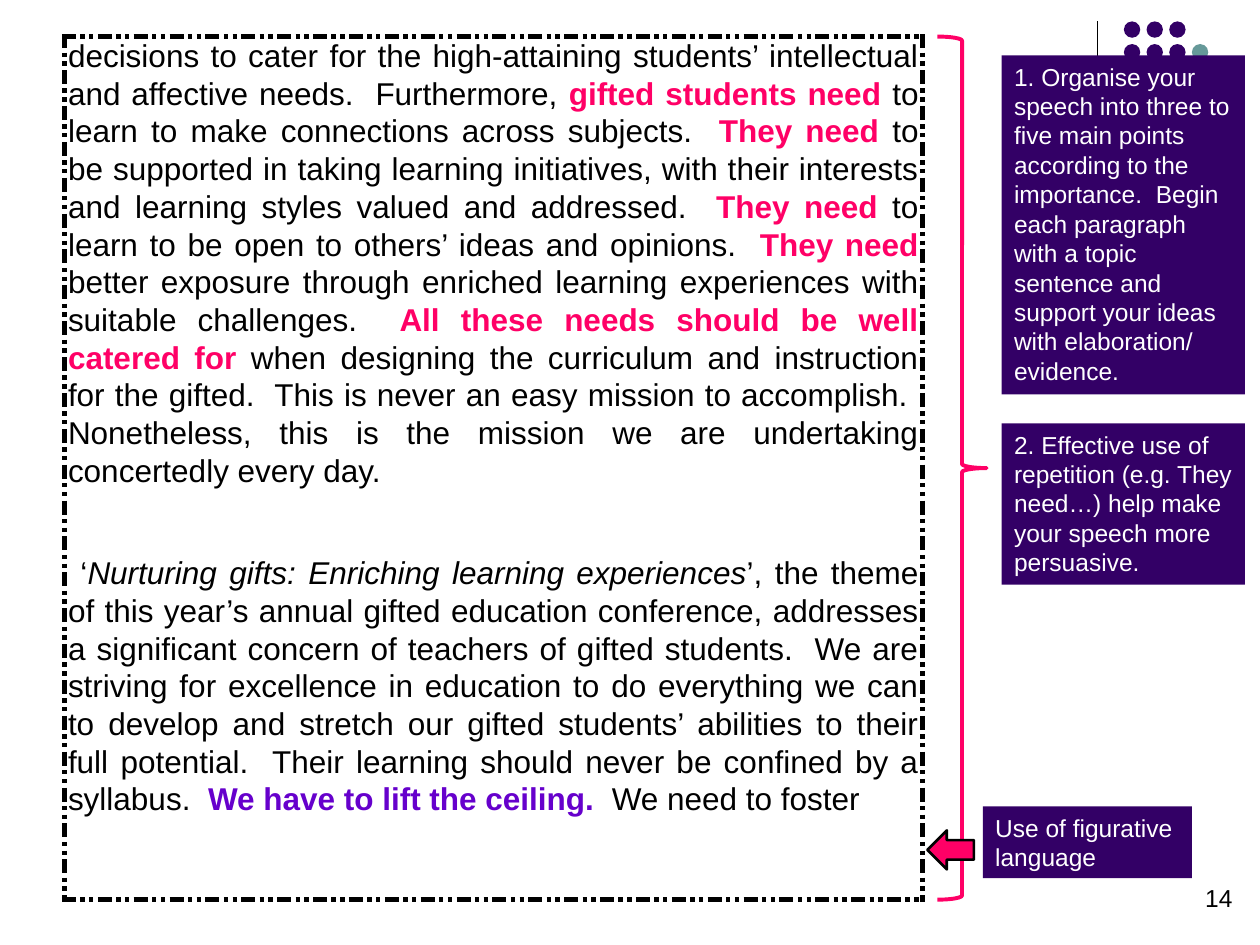
from lxml import etree
from pptx import Presentation
from pptx.dml.color import RGBColor
from pptx.enum import shapes, text
from pptx.oxml import ns
from pptx.util import Inches, Pt

BLACK = RGBColor(0x00, 0x00, 0x00)
WHITE = RGBColor(0xFF, 0xFF, 0xFF)
PINK = RGBColor(0xFF, 0x00, 0x66)
VIOLET = RGBColor(0x66, 0x00, 0xCC)
INDIGO = RGBColor(0x33, 0x00, 0x66)
TEAL = RGBColor(0x66, 0x99, 0x99)
FONT = "Arial"
SHAPE = shapes.MSO_SHAPE

PLAIN, NEED, CEILING, THEME = "plain", "need", "ceiling", "theme"
STYLES = {
    PLAIN: (BLACK, False, False),
    NEED: (PINK, True, False),
    CEILING: (VIOLET, True, False),
    THEME: (BLACK, False, True),
}

NEEDS = [
    ("decisions to cater for the high-attaining students’ intellectual and affective needs.  Furthermore, ", PLAIN),
    ("gifted students need ", NEED),
    ("to learn to make connections across subjects.  ", PLAIN),
    ("They need ", NEED),
    ("to be supported in taking learning initiatives, with their interests and learning styles valued and addressed. ", PLAIN),
    (" They need", NEED),
    (" to learn to be open to others’ ideas and opinions.  ", PLAIN),
    ("They need ", NEED),
    ("better exposure through enriched learning experiences with suitable challenges.  ", PLAIN),
    ("All these needs should be well catered for ", NEED),
    ("when designing the curriculum and instruction for the gifted.  This is never an easy mission to "
     "accomplish.  Nonetheless, this is the mission we are undertaking concertedly every day.", PLAIN),
]
CONFERENCE = [
    (" ‘", PLAIN),
    ("Nurturing gifts: Enriching learning experiences", THEME),
    ("’, the theme of this year’s annual gifted education conference, addresses a significant concern of "
     "teachers of gifted students.  We are striving for excellence in education to do everything we can to "
     "develop and stretch our gifted students’ abilities to their full potential.  Their learning should "
     "never be confined by a syllabus.  ", PLAIN),
    ("We have to lift the ceiling.  ", CEILING),
    ("We need to foster", PLAIN),
]
TIPS = [
    ("1. Organise your speech into three to five main points according to the importance.  Begin each "
     "paragraph with a topic sentence and support your ideas with elaboration/ evidence.",
     (7.95, 0.44, 1.93, 2.69)),
    ("2. Effective use of repetition (e.g. They need…) help make your speech more persuasive.",
     (7.95, 3.36, 1.93, 1.28)),
    ("Use of figurative language", (7.8, 6.4, 1.66, 0.57)),
]


def inches(box):
    """Convert a box of numbers to lengths."""
    return [Inches(value) for value in box]


def style_font(font, size, color, bold=False, italic=False):
    """Set the whole look of a font."""
    font.name, font.size = FONT, Pt(size)
    font.bold, font.italic = bold, italic
    font.color.rgb = color


def add_figure(slide, preset, box, fill=None, line=None, weight=1):
    """Add a preset shape without shadow."""
    figure = slide.shapes.add_shape(preset, *inches(box))
    figure.shadow.inherit = False
    if fill is None:
        figure.fill.background()
    else:
        figure.fill.solid()
        figure.fill.fore_color.rgb = fill
    if line is None:
        figure.line.fill.background()
    else:
        figure.line.color.rgb = line
        figure.line.width = Pt(weight)
    return figure


def add_ornament(slide, box):
    """Draw the corner rule and the two rows of dots."""
    left, top, gap, height = box
    rule = slide.shapes.add_connector(
        shapes.MSO_CONNECTOR.STRAIGHT, *inches((left, top, left, top + height)))
    rule.line.color.rgb = BLACK
    rule.line.width = Pt(0.75)
    etree.SubElement(rule._element.spPr, ns.qn("a:effectLst"))
    size, pitch = 0.13, 0.18
    for row, colors in enumerate([[INDIGO] * 3, [INDIGO] * 3 + [TEAL]]):
        for column, color in enumerate(colors):
            dot = (left + gap + column * pitch, top + row * pitch, size, size)
            add_figure(slide, SHAPE.OVAL, dot, color)


def border_cell(cell):
    """Give a cell a dash-dot-dot border on all sides."""
    properties = cell._tc.get_or_add_tcPr()
    for index, side in enumerate(("lnL", "lnR", "lnT", "lnB")):
        line = etree.Element(ns.qn("a:" + side), w=str(Pt(3)))
        fill = etree.SubElement(line, ns.qn("a:solidFill"))
        etree.SubElement(fill, ns.qn("a:srgbClr"), val=str(BLACK))
        etree.SubElement(line, ns.qn("a:prstDash"), val="sysDashDotDot")
        properties.insert(index, line)


def add_speech(slide, box):
    """Place the speech extract in a one-cell table."""
    table = slide.shapes.add_table(1, 1, *inches(box)).table
    table.first_row = table.horz_banding = False
    cell = table.cell(0, 0)
    cell.fill.background()
    border_cell(cell)
    cell.margin_left = cell.margin_right = Inches(0.03)
    cell.margin_top = cell.margin_bottom = 0
    frame = cell.text_frame
    extracts = [(frame.paragraphs[0], NEEDS, 37), (frame.add_paragraph(), CONFERENCE, 7.5)]
    for paragraph, pieces, space in extracts:
        paragraph.alignment = text.PP_ALIGN.JUSTIFY
        paragraph.line_spacing = 1.07
        paragraph.space_after = Pt(space)
        for words, style in pieces:
            run = paragraph.add_run()
            run.text = words
            style_font(run.font, 18, *STYLES[style])


def add_tip(slide, words, box):
    """Place one speaking tip in a dark box."""
    frame = add_figure(slide, SHAPE.RECTANGLE, box, INDIGO).text_frame
    frame.word_wrap = True
    frame.vertical_anchor = text.MSO_ANCHOR.TOP
    frame.text = words
    paragraph = frame.paragraphs[0]
    paragraph.alignment = text.PP_ALIGN.LEFT
    style_font(paragraph.runs[0].font, 14, WHITE)


def add_page_number(slide, box):
    """Place the page number at the right of its box."""
    frame = slide.shapes.add_textbox(*inches(box)).text_frame
    frame.word_wrap = True
    frame.text = "14"
    paragraph = frame.paragraphs[0]
    paragraph.alignment = text.PP_ALIGN.RIGHT
    style_font(paragraph.runs[0].font, 14, BLACK)


def main():
    """Build the slide and save it."""
    deck = Presentation()
    deck.slide_width, deck.slide_height = Inches(10), Inches(7.5)
    slide = deck.slides.add_slide(deck.slide_layouts[6])
    add_ornament(slide, (8.71, 0.17, 0.21, 1.66))
    add_page_number(slide, (7.55, 6.96, 2.33, 0.5))
    add_speech(slide, (0.51, 0.29, 6.81, 6.85))
    add_figure(slide, SHAPE.RIGHT_BRACE, (7.44, 0.29, 0.39, 6.85), line=PINK, weight=2.25)
    add_figure(slide, SHAPE.LEFT_ARROW, (7.36, 6.59, 0.37, 0.31), PINK, BLACK, 1.5)
    for words, box in TIPS:
        add_tip(slide, words, box)
    deck.save("out.pptx")


if __name__ == "__main__":
    main()
